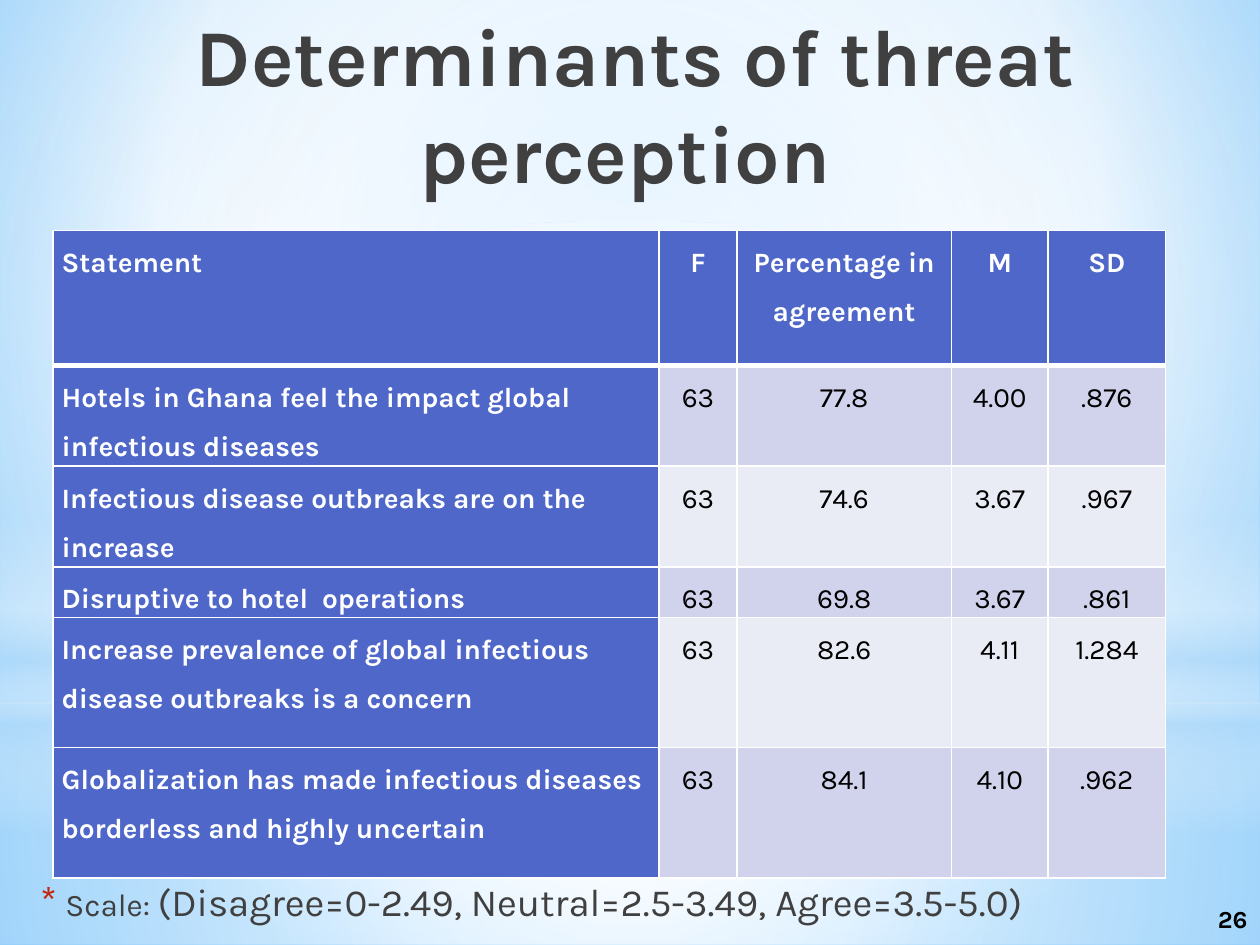
from dataclasses import dataclass

from lxml import etree
from pptx import Presentation
from pptx.dml.color import RGBColor
from pptx.enum.shapes import MSO_SHAPE
from pptx.enum.text import MSO_ANCHOR, PP_ALIGN
from pptx.oxml.ns import qn
from pptx.util import Inches, Pt

RECTANGLE, OVAL = MSO_SHAPE.RECTANGLE, MSO_SHAPE.OVAL
LEFT, CENTER, RIGHT = PP_ALIGN.LEFT, PP_ALIGN.CENTER, PP_ALIGN.RIGHT
TOP, MIDDLE = MSO_ANCHOR.TOP, MSO_ANCHOR.MIDDLE
SLIDE_WIDTH, SLIDE_HEIGHT = Inches(10), Inches(7.5)


@dataclass(frozen=True)
class Theme:
    font: str = "Karla"
    ink: str = "404040"
    black: str = "000000"
    white: str = "FFFFFF"
    header: str = "4E67C8"
    bands: tuple = ("D0D3EB", "E9EBF5")
    star: str = "C3260C"
    haze: str = "B4DCFA"
    sky: str = "9ED5FF"
    deep_sky: str = "5BB9FF"
    title_size: int = 46
    scale_size: int = 22
    label_size: int = 18
    cell_size: int = 16
    number_size: int = 14


THEME = Theme()
CENTERED = (50, 50, 50, 50)
COLUMN_SHARES = (48.1, 6.2, 17, 7.7, 9.3)
ROW_SHARES = (14.27, 9.33, 9.33, 4.8, 13.8, 13.8)
ROWS = (
    ("Statement", "F", "Percentage in agreement", "M", "SD"),
    ("Hotels in Ghana feel the impact global infectious diseases", "63", "77.8", "4.00", ".876"),
    ("Infectious disease outbreaks are on the increase", "63", "74.6", "3.67", ".967"),
    ("Disruptive to hotel  operations", "63", "69.8", "3.67", ".861"),
    ("Increase prevalence of global infectious disease outbreaks is a concern",
     "63", "82.6", "4.11", "1.284"),
    ("Globalization has made infectious diseases borderless and highly uncertain",
     "63", "84.1", "4.10", ".962"),
)


def across(share):
    return int(SLIDE_WIDTH * share / 100)


def down(share):
    return int(SLIDE_HEIGHT * share / 100)


def area(left, top, width, height):
    return across(left), down(top), across(width), down(height)


def add_child(parent, tag, **attributes):
    return etree.SubElement(parent, qn(tag), {key: str(value) for key, value in attributes.items()})


def add_color(parent, color, opacity=100):
    node = add_child(parent, "a:srgbClr", val=color)
    if opacity < 100:
        add_child(node, "a:alpha", val=opacity * 1000)


def paint_gradient(fill, owner, stops, focus=None):
    fill.solid()
    solid = next(owner.iter(qn("a:solidFill")))
    gradient = etree.Element(qn("a:gradFill"), rotWithShape="1")
    stop_list = add_child(gradient, "a:gsLst")
    for position, *color in stops:
        add_color(add_child(stop_list, "a:gs", pos=position * 1000), *color)
    if focus:
        circle = add_child(gradient, "a:path", path="circle")
        edges = {side: share * 1000 for side, share in zip("ltrb", focus)}
        add_child(circle, "a:fillToRect", **edges)
    else:
        add_child(gradient, "a:lin", ang=5400000, scaled=0)
    solid.getparent().replace(solid, gradient)


def add_glow(page, kind, place, stops, focus=None):
    shape = page.shapes.add_shape(kind, *area(*place))
    shape.shadow.inherit = False
    shape.line.fill.background()
    paint_gradient(shape.fill, shape.element.spPr, stops, focus)


def add_backdrop(page):
    white, haze = THEME.white, THEME.haze
    paint_gradient(page.background.fill, page.element,
                   ((0, THEME.sky), (60, white), (100, THEME.deep_sky)), (20, 10, 20, 60))
    add_glow(page, RECTANGLE, (0, 74.4, 100, 25.6),
             ((0, white, 91), (37, white, 76), (100, haze, 79)), CENTERED)
    add_glow(page, RECTANGLE, (0, 0, 100, 74.4),
             ((0, white, 89), (48, white, 62), (100, haze, 79)), CENTERED)
    add_glow(page, RECTANGLE, (0, 54.93, 100, 33.33),
             ((0, white, 0), (29, white, 30), (45, haze, 40),
              (55, white, 26), (65, haze, 60), (100, white, 0)))
    add_glow(page, OVAL, (0, 23.33, 100, 74.4), ((0, white), (56, white, 0)), CENTERED)


def add_span(para, text, size, color, bold=False):
    span = para.add_run()
    span.text = text
    span.font.name = THEME.font
    span.font.size = Pt(size)
    span.font.bold = bold
    span.font.color.rgb = RGBColor.from_string(color)


def add_text(page, place, spans, align=LEFT, anchor=TOP):
    box = page.shapes.add_textbox(*area(*place))
    box.text_frame.word_wrap = True
    box.text_frame.vertical_anchor = anchor
    para = box.text_frame.paragraphs[0]
    para.alignment = align
    for span in spans:
        add_span(para, *span)
    return para


def add_bullet(para, symbol, color, percent):
    properties = para._p.get_or_add_pPr()
    properties.set("marL", str(Inches(0.25)))
    properties.set("indent", str(Inches(-0.2)))
    add_color(add_child(properties, "a:buClr"), color)
    add_child(properties, "a:buSzPct", val=percent * 1000)
    add_child(properties, "a:buFont", typeface=THEME.font)
    add_child(properties, "a:buChar", char=symbol)


def set_borders(cell, top, bottom):
    properties = cell._tc.get_or_add_tcPr()
    for side, width in (("L", 1), ("R", 1), ("T", top), ("B", bottom)):
        line = add_child(properties, f"a:ln{side}", w=Pt(width))
        add_color(add_child(line, "a:solidFill"), THEME.white)


def fill_cell(cell, text, row, column):
    heading = row == 0 or column == 0
    set_borders(cell, 3 if row == 1 else 1, 3 if row == 0 else 1)
    cell.fill.solid()
    cell.fill.fore_color.rgb = RGBColor.from_string(
        THEME.header if heading else THEME.bands[(row - 1) % 2])
    cell.margin_left = cell.margin_right = Inches(0.07)
    cell.margin_top = cell.margin_bottom = 0
    para = cell.text_frame.paragraphs[0]
    para.alignment = CENTER if column else LEFT
    para.line_spacing = 1.5
    add_span(para, text, THEME.cell_size, THEME.white if heading else THEME.black, heading)


def add_statement_table(page):
    place = area(4.2, 24.4, sum(COLUMN_SHARES), sum(ROW_SHARES))
    table = page.shapes.add_table(len(ROWS), len(COLUMN_SHARES), *place).table
    for column, share in zip(table.columns, COLUMN_SHARES):
        column.width = across(share)
    for row, share in zip(table.rows, ROW_SHARES):
        row.height = down(share)
    for row, texts in enumerate(ROWS):
        for column, text in enumerate(texts):
            fill_cell(table.cell(row, column), text, row, column)


def main():
    deck = Presentation()
    deck.slide_width, deck.slide_height = SLIDE_WIDTH, SLIDE_HEIGHT
    page = deck.slides.add_slide(deck.slide_layouts[6])
    add_backdrop(page)
    add_text(page, (5.8, 0, 89.2, 16.67), [
        ("Determinants of threat perception ", THEME.title_size, THEME.ink, True)], CENTER)
    scale = add_text(page, (1.7, 92.3, 96.7, 6.5), [
        ("Scale: ", THEME.label_size, THEME.ink),
        ("(Disagree=0-2.49, Neutral=2.5-3.49, Agree=3.5-5.0)", THEME.scale_size, THEME.ink)])
    add_bullet(scale, "*", THEME.star, 130)
    add_statement_table(page)
    add_text(page, (80, 94.4, 20, 5.6),
             [("26", THEME.number_size, THEME.black, True)], RIGHT, MIDDLE)
    deck.save("out.pptx")


if __name__ == "__main__":
    main()
